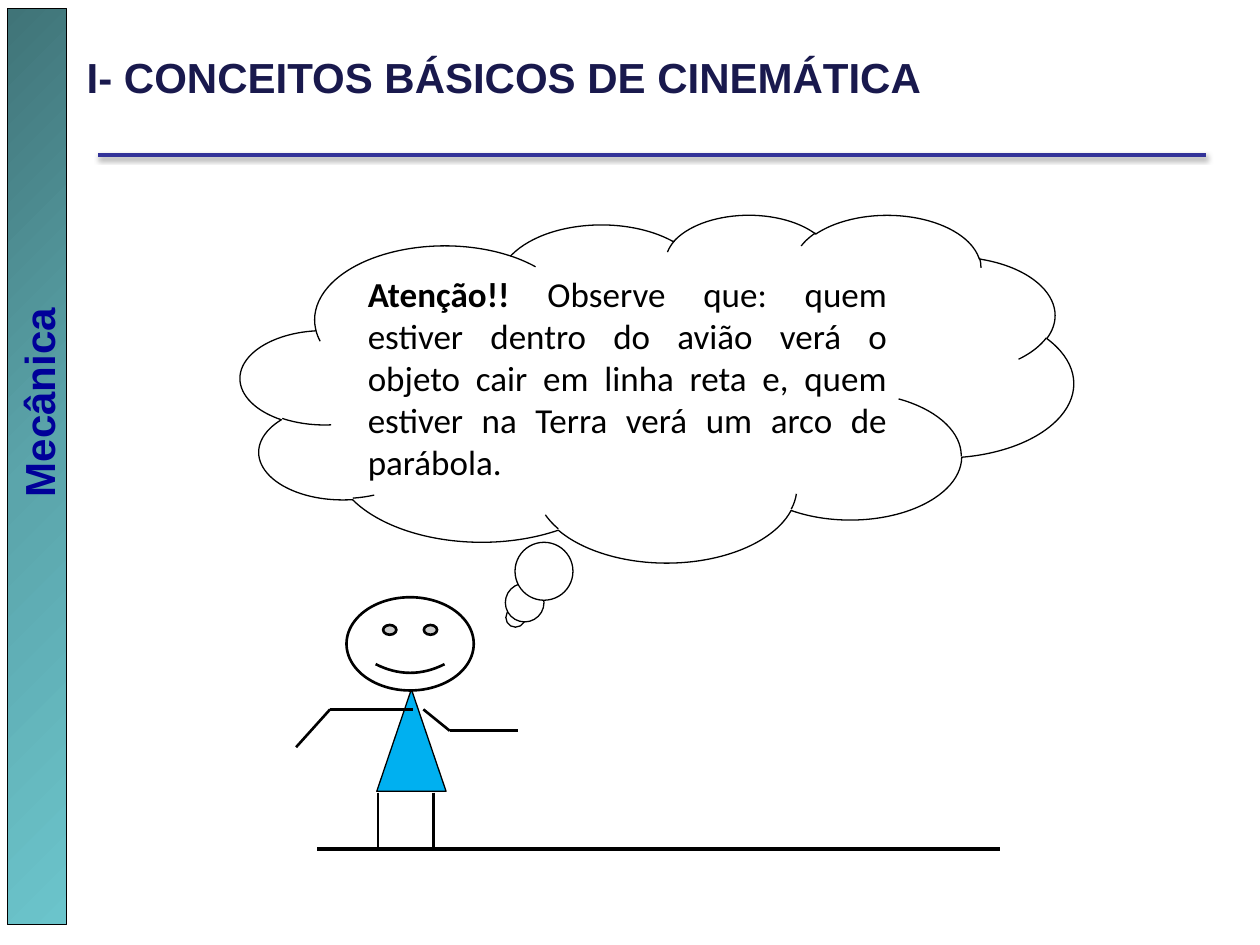
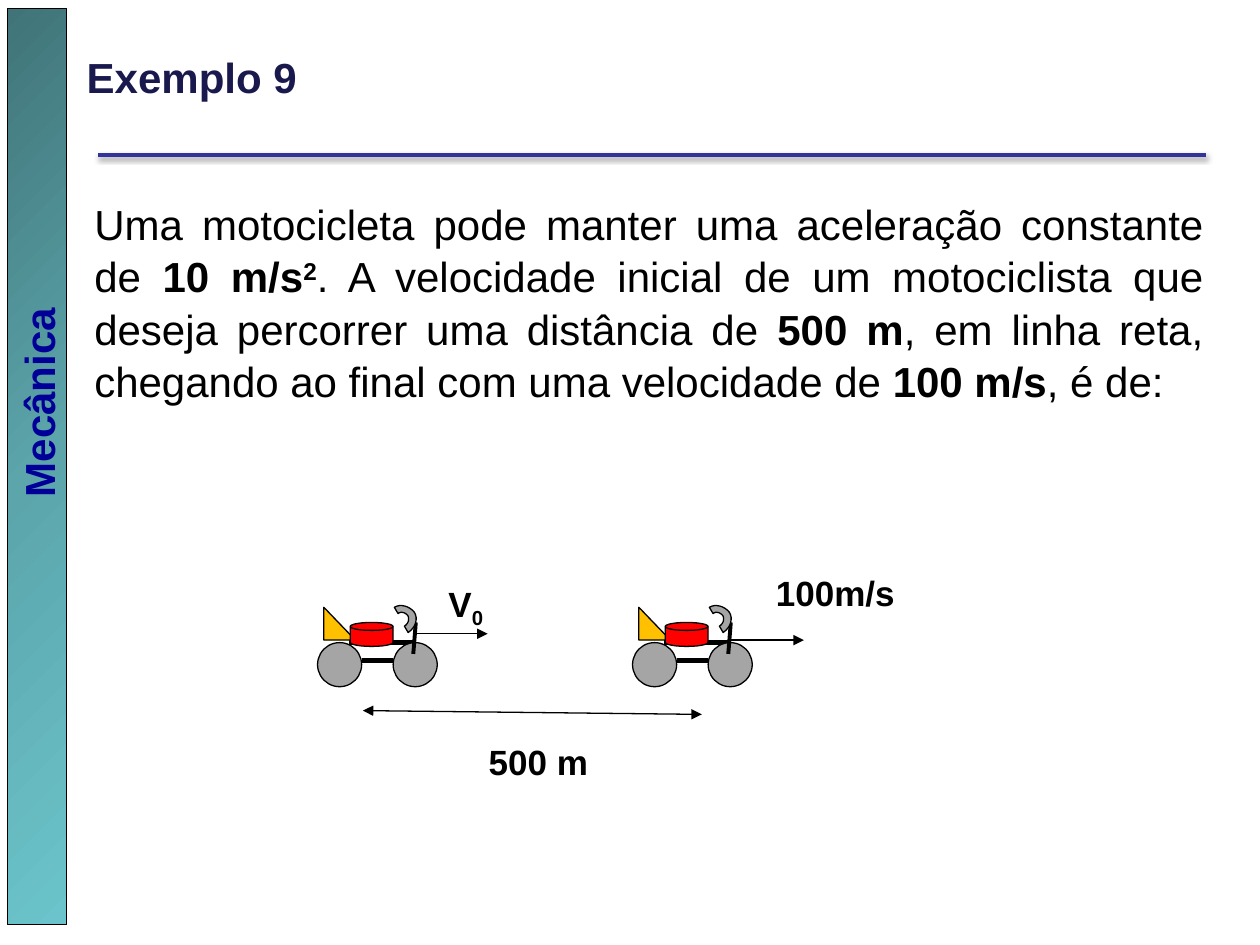
from copy import deepcopy
from typing import NamedTuple

from lxml.etree import SubElement
from pptx import Presentation
from pptx.dml.color import RGBColor
from pptx.enum.shapes import MSO_CONNECTOR, MSO_SHAPE
from pptx.enum.text import PP_ALIGN
from pptx.oxml.ns import qn
from pptx.util import Inches, Pt

BLACK, WHITE, GREY = "000000", "FFFFFF", "A5A5A5"
NAVY, RULE_BLUE, SIDEBAR_BLUE = "19194D", "333399", "000099"
SKY, AMBER, RED = "00B0F0", "FFC000", "FF0000"
SIDEBAR_GRADIENT = [(0, "407478"), (0.5, "5BA5AB"), (1, "6BC4CB")]

Point = tuple[float, float]


class Run(NamedTuple):
    text: str
    bold: bool = False
    baseline: int = 0


class TextStyle(NamedTuple):
    size: int
    color: str = BLACK
    font: str = "Arial"
    align: PP_ALIGN = PP_ALIGN.LEFT


class Box(NamedTuple):
    left: float
    top: float
    width: float
    height: float


class Line(NamedTuple):
    start: Point
    end: Point
    weight: float = 1.5


class Part(NamedTuple):
    kind: MSO_SHAPE
    box: Box
    fill: str
    weight: float = 0.75


LABEL = TextStyle(20)

ARMS_AND_LEGS = [
    Line((3.36, 5.63), (3.57, 5.8)),
    Line((3.57, 5.8), (4.11, 5.8)),
    Line((2.35, 5.93), (2.62, 5.63)),
    Line((2.62, 5.63), (3.28, 5.63)),
    Line((3.44, 6.29), (3.44, 6.74)),
    Line((3.44, 6.74), (3.92, 6.74)),
    Line((3, 6.29), (3, 6.74)),
    Line((3, 6.74), (3.32, 6.74)),
]

# Motorcycle parts, measured from the left edge of its rear wheel
TOP_BAR = Line((0.25, 5.1), (0.78, 5.1), 3)
WHEELS = [Part(MSO_SHAPE.OVAL, Box(left, 5.1, 0.35, 0.35), GREY) for left in (0, 0.6)]
LOWER_BAR = Line((0.35, 5.24), (0.6, 5.24), 3)
FORK = Line((0.76, 5.19), (0.78, 4.94), 2.25)
SEAT_AND_TANK = [
    Part(MSO_SHAPE.RIGHT_TRIANGLE, Box(0.05, 4.82, 0.25, 0.26), AMBER),
    Part(MSO_SHAPE.FLOWCHART_MAGNETIC_DISK, Box(0.26, 4.94, 0.34, 0.19), RED),
]
HANDLEBAR_INNER = [
    [(0.64, 4.87), (0.66, 4.85), (0.7, 4.86), (0.72, 4.89)],
    [(0.72, 4.89), (0.73, 4.92), (0.72, 4.95), (0.69, 4.97)],
]
HANDLEBAR_OUTER = [
    [(0.72, 5.02), (0.78, 4.98), (0.8, 4.91), (0.77, 4.86)],
    [(0.77, 4.86), (0.73, 4.81), (0.66, 4.79), (0.61, 4.82)],
]


def rgb(color: str) -> RGBColor:
    return RGBColor.from_string(color)


def inches(box: Box) -> list[int]:
    return [Inches(length) for length in box]


def finish(shape, fill: str, weight: float = 0.75) -> None:
    shape.shadow.inherit = False
    shape.fill.solid()
    shape.fill.fore_color.rgb = rgb(fill)
    shape.line.color.rgb = rgb(BLACK)
    shape.line.width = Pt(weight)


def add_part(slide, part: Part, shift: float = 0):
    box = part.box._replace(left=part.box.left + shift)
    shape = slide.shapes.add_shape(part.kind, *inches(box))
    finish(shape, part.fill, part.weight)
    return shape


def add_line(slide, line: Line, color: str = BLACK, shift: float = 0,
             arrows: tuple[str, ...] = ()):
    """Draw a straight line; arrows may hold "headEnd" and "tailEnd"."""
    (x1, y1), (x2, y2) = line.start, line.end
    connector = slide.shapes.add_connector(
        MSO_CONNECTOR.STRAIGHT,
        Inches(x1 + shift), Inches(y1), Inches(x2 + shift), Inches(y2))
    connector.line.color.rgb = rgb(color)
    connector.line.width = Pt(line.weight)
    for arrow in arrows:
        SubElement(connector.line._get_or_add_ln(), qn(f"a:{arrow}"), type="triangle")
    SubElement(connector._element.spPr, qn("a:effectLst"))
    return connector


def write(frame, runs: list[Run], style: TextStyle):
    frame.word_wrap = True
    paragraph = frame.paragraphs[0]
    paragraph.alignment = style.align
    paragraph.font.name = style.font
    paragraph.font.size = Pt(style.size)
    paragraph.font.color.rgb = rgb(style.color)
    same_weight = len({part.bold for part in runs}) == 1
    if same_weight:
        paragraph.font.bold = runs[0].bold
    for part in runs:
        run = paragraph.add_run()
        run.text = part.text
        if not same_weight:
            run.font.bold = part.bold
        if part.baseline:
            run.font._element.set("baseline", str(part.baseline * 1000))
    return paragraph


def add_text(slide, box: Box, runs: list[Run], style: TextStyle):
    textbox = slide.shapes.add_textbox(*inches(box))
    write(textbox.text_frame, runs, style)
    return textbox


def add_sidebar(slide) -> None:
    band = add_part(slide, Part(MSO_SHAPE.RECTANGLE, Box(0.06, 0.07, 0.47, 7.27), WHITE))
    band.fill.gradient()
    band.fill.gradient_angle = 315
    stops = band._element.spPr.find(f".//{qn('a:gsLst')}")
    stops.append(deepcopy(stops[0]))
    for stop, (position, color) in zip(band.fill.gradient_stops, SIDEBAR_GRADIENT):
        stop.position = position
        stop.color.rgb = rgb(color)
    subject = add_text(slide, Box(-1.74, 4.05, 4.09, 0.5), [Run("Mecânica", True)],
                       TextStyle(24, SIDEBAR_BLUE, align=PP_ALIGN.RIGHT))
    subject.rotation = 270
    subject.text_frame.margin_right = Inches(0.19)


def add_title_rule(slide) -> None:
    rule = add_line(slide, Line((0.78, 1.23), (9.57, 1.23), 2), RULE_BLUE)
    effects = rule._element.spPr.find(qn("a:effectLst"))
    shadow = SubElement(effects, qn("a:outerShdw"), blurRad="40000", dist="20000",
                        dir="5400000", rotWithShape="0")
    shade = SubElement(shadow, qn("a:srgbClr"), val=BLACK)
    SubElement(shade, qn("a:alpha"), val="38000")


def add_lesson_slide(deck, title: str):
    slide = deck.slides.add_slide(deck.slide_layouts[6])
    add_sidebar(slide)
    add_title_rule(slide)
    add_text(slide, Box(0.59, 0.36, 8.66, 0.5), [Run(title, True)], TextStyle(24, NAVY))
    return slide


def curve_points(curve: list[Point], steps: int = 8) -> list[Point]:
    """Sample a cubic Bézier curve given by its four control points."""
    points = []
    for step in range(steps + 1):
        t = step / steps
        weights = ((1 - t) ** 3, 3 * t * (1 - t) ** 2, 3 * t ** 2 * (1 - t), t ** 3)
        points.append(tuple(sum(w * p[axis] for w, p in zip(weights, curve))
                            for axis in (0, 1)))
    return points


def add_handlebar(slide, left: float) -> None:
    outline = [(Inches(x + left), Inches(y))
               for curve in HANDLEBAR_INNER + HANDLEBAR_OUTER
               for x, y in curve_points(curve)]
    builder = slide.shapes.build_freeform(*outline[0])
    builder.add_line_segments(outline[1:], close=True)
    finish(builder.convert_to_shape(), GREY)


def add_motorcycle(slide, left: float) -> None:
    add_line(slide, TOP_BAR, shift=left)
    for wheel in WHEELS:
        add_part(slide, wheel, left)
    for bar in (LOWER_BAR, FORK):
        add_line(slide, bar, shift=left)
    add_handlebar(slide, left)
    for part in SEAT_AND_TANK:
        add_part(slide, part, left)


def build_concepts(deck) -> None:
    slide = add_lesson_slide(deck, "I- CONCEITOS BÁSICOS DE CINEMÁTICA")
    add_line(slide, Line((2.52, 6.74), (7.94, 6.74), 2.25))
    add_part(slide, Part(MSO_SHAPE.ISOSCELES_TRIANGLE, Box(2.99, 5.47, 0.55, 0.81), SKY))
    face = add_part(slide, Part(MSO_SHAPE.SMILEY_FACE, Box(2.75, 4.74, 1.01, 0.74), WHITE, 1.5))
    face.adjustments[0] = 0.05
    for limb in ARMS_AND_LEGS:
        add_line(slide, limb)

    thought = add_part(slide, Part(MSO_SHAPE.CLOUD_CALLOUT, Box(1.91, 1.7, 6.61, 2.76), WHITE))
    thought.adjustments[0] = -0.17
    thought.adjustments[1] = 0.66
    thought.text_frame.vertical_anchor = None
    remark = write(thought.text_frame, [
        Run("Atenção!!", True),
        Run(" Observe que: quem estiver dentro do avião verá o objeto cair em linha reta e, "
            "quem estiver na Terra verá um arco de parábola."),
    ], TextStyle(20, font="Calibri", align=PP_ALIGN.JUSTIFY))
    remark.space_after = Pt(10)


def build_example(deck) -> None:
    slide = add_lesson_slide(deck, "Exemplo 9")
    problem = add_text(slide, Box(0.65, 1.51, 9, 2), [
        Run("Uma motocicleta pode manter uma aceleração constante de "),
        Run("10 m/s", True),
        Run("2", True, 30),
        Run(". A velocidade inicial de um motociclista que deseja percorrer uma distância de "),
        Run("500 m", True),
        Run(", em linha reta, chegando ao final com uma velocidade de "),
        Run("100 m/s", True),
        Run(", é de:"),
    ], TextStyle(24, align=PP_ALIGN.JUSTIFY))
    paragraph = problem.text_frame.paragraphs[0]
    paragraph.space_before = Pt(2)
    paragraph.line_spacing = 1.04

    for left in (5.02, 2.52):
        add_motorcycle(slide, left)
    add_line(slide, Line((2.88, 5.64), (5.57, 5.67), 0.75), arrows=("headEnd", "tailEnd"))
    for velocity in (Line((3.3, 5.03), (3.87, 5.03), 0.75),
                     Line((5.8, 5.08), (6.38, 5.08), 0.75)):
        add_line(slide, velocity, arrows=("tailEnd",))
    add_text(slide, Box(3.46, 4.57, 0.71, 0.44), [Run("V", True), Run("0", True, -25)], LABEL)
    add_text(slide, Box(6.06, 4.49, 1.26, 0.44), [Run("100m/s", True)], LABEL)
    add_text(slide, Box(3.78, 5.83, 1.02, 0.44), [Run("500 m", True)], LABEL)


def main() -> None:
    deck = Presentation()
    deck.slide_width, deck.slide_height = Inches(10), Inches(7.5)
    build_concepts(deck)
    build_example(deck)
    deck.save("out.pptx")


if __name__ == "__main__":
    main()
